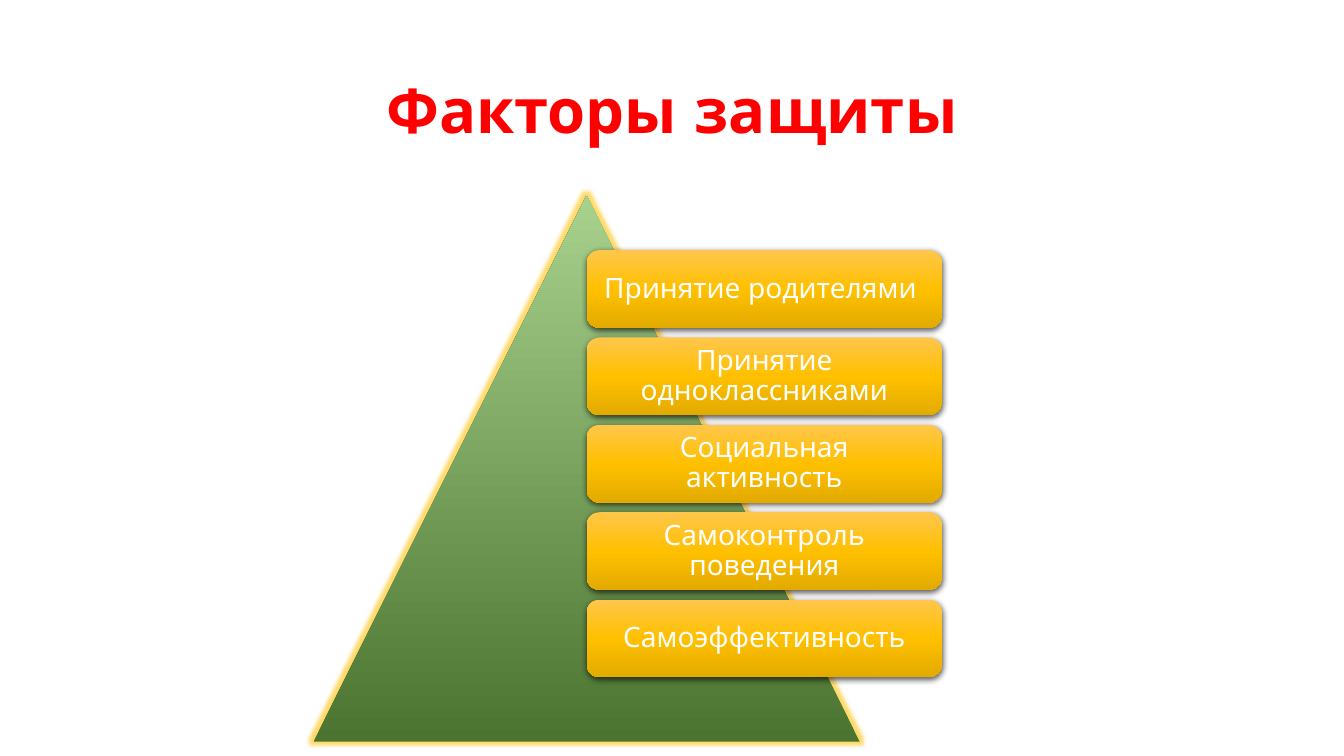
from lxml.etree import SubElement
from pptx import Presentation
from pptx.dml.color import RGBColor
from pptx.enum.shapes import MSO_SHAPE
from pptx.enum.text import MSO_ANCHOR, PP_ALIGN
from pptx.oxml.ns import qn
from pptx.util import Pt

FONT = "Quicksand"
RED = RGBColor(0xFF, 0x00, 0x00)
WHITE = RGBColor(0xFF, 0xFF, 0xFF)
BLACK = RGBColor(0x00, 0x00, 0x00)
GOLD = RGBColor(0xFF, 0xC0, 0x00)
GREENS = [RGBColor(0x4B, 0x74, 0x30), RGBColor(0xA9, 0xD1, 0x8E)]
GOLDS = [RGBColor(0xFF, 0xC6, 0x4B), GOLD, RGBColor(0xE3, 0xAB, 0x00)]

FACTORS = [
    "Принятие родителями ",
    "Принятие одноклассниками",
    "Социальная активность",
    "Самоконтроль поведения",
    "Самоэффективность",
]
CARD_LEFT, CARD_TOP = 419.1, 178.7
CARD_WIDTH, CARD_HEIGHT = 253.6, 55.5
CARD_STEP = 62.4


def add_colour(parent, colour, alpha=100):
    element = SubElement(parent, qn("a:srgbClr"), val=str(colour))
    if alpha < 100:
        SubElement(element, qn("a:alpha"), val=str(alpha * 1000))


class SlideBuilder:
    def __init__(self, deck):
        self.slide = deck.slides.add_slide(deck.slide_layouts[5])

    def add_text(self, shape, text, size, colour, bold=False, inset=6):
        frame = shape.text_frame
        frame.word_wrap = True
        frame.vertical_anchor = MSO_ANCHOR.MIDDLE
        frame.margin_left = frame.margin_right = Pt(inset)
        frame.margin_top = frame.margin_bottom = Pt(inset)
        para = frame.paragraphs[0]
        para.alignment = PP_ALIGN.CENTER
        para.line_spacing = 0.9
        span = para.add_run()
        span.text = text
        span.font.name = FONT
        span.font.size = Pt(size)
        span.font.bold = bold
        span.font.color.rgb = colour

    def title(self, text, left, top, width, height):
        box = self.slide.shapes.title
        box.left, box.top = Pt(left), Pt(top)
        box.width, box.height = Pt(width), Pt(height)
        self.add_text(box, text, 44, RED, bold=True)

    def gradient_shape(self, kind, left, top, width, height, colours, angle):
        """Add a borderless shape with evenly spaced stops; angle is clockwise."""
        shape = self.slide.shapes.add_shape(
            kind, Pt(left), Pt(top), Pt(width), Pt(height))
        shape.line.fill.background()
        shape.shadow.inherit = False
        shape.fill.gradient()
        shape.fill.gradient_angle = 360 - angle
        stops = shape.element.spPr.find(".//" + qn("a:gsLst"))
        for stop in list(stops):
            stops.remove(stop)
        for index, colour in enumerate(colours):
            position = 100000 * index // (len(colours) - 1)
            add_colour(SubElement(stops, qn("a:gs"), pos=str(position)), colour)
        return shape

    def effect(self, shape, name, colour, alpha, **lengths):
        effects = shape.element.spPr.find(qn("a:effectLst"))
        values = {key: str(value) for key, value in lengths.items()}
        add_colour(SubElement(effects, qn(name), **values), colour, alpha)

    def pyramid(self, left, top, side):
        shape = self.gradient_shape(
            MSO_SHAPE.ISOSCELES_TRIANGLE, left, top, side, side, GREENS, 270)
        self.effect(shape, "a:glow", GOLD, 60, rad=Pt(5))

    def card(self, text, top):
        shape = self.gradient_shape(
            MSO_SHAPE.ROUNDED_RECTANGLE, CARD_LEFT, top,
            CARD_WIDTH, CARD_HEIGHT, GOLDS, 90)
        self.effect(shape, "a:outerShdw", BLACK, 63,
                    blurRad=Pt(4.5), dist=Pt(1.5), dir=90 * 60000)
        self.add_text(shape, text, 20, WHITE)


def main():
    deck = Presentation()
    deck.slide_width, deck.slide_height = Pt(960), Pt(540)
    builder = SlideBuilder(deck)
    builder.title("Факторы защиты", 66, 28.75, 828, 104.4)
    builder.pyramid(224, 139.7, 390)
    for index, factor in enumerate(FACTORS):
        builder.card(factor, CARD_TOP + index * CARD_STEP)
    deck.save("out.pptx")


if __name__ == "__main__":
    main()
